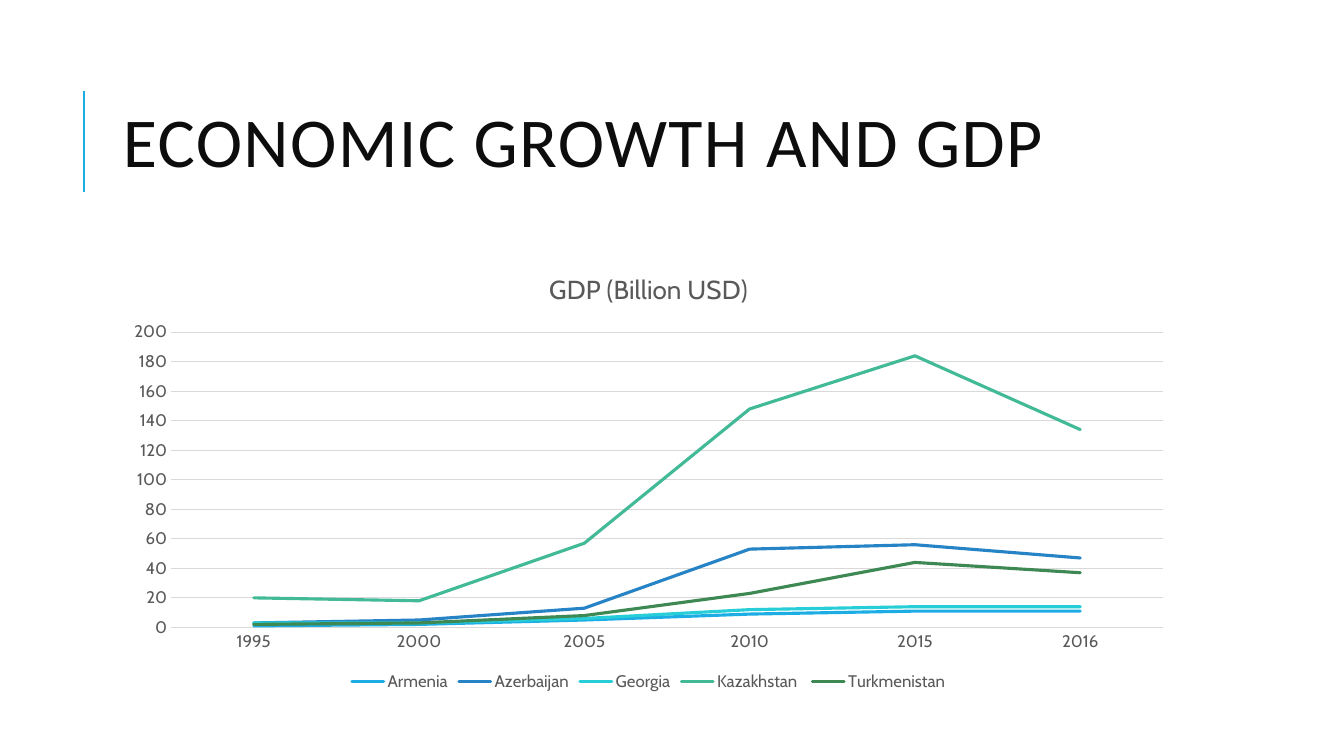
from dataclasses import dataclass

from lxml.etree import SubElement
from pptx import Presentation
from pptx.chart.axis import CategoryAxis, ValueAxis
from pptx.chart.chart import Chart
from pptx.chart.data import CategoryChartData
from pptx.dml.color import RGBColor
from pptx.dml.line import LineFormat
from pptx.enum.chart import XL_CHART_TYPE, XL_LEGEND_POSITION, XL_MARKER_STYLE, XL_TICK_MARK
from pptx.enum.shapes import MSO_CONNECTOR
from pptx.enum.text import MSO_ANCHOR, MSO_AUTO_SIZE, PP_ALIGN
from pptx.oxml.ns import qn
from pptx.slide import Slide
from pptx.text.text import Font
from pptx.util import Pt

HEADING_FONT = "Calibri"
CHART_FONT = "Cabin"
GREY_TEXT = "595959"
GRID_GREY = "D9D9D9"
CONTENT_LEFT = Pt(80.64)
CONTENT_WIDTH = Pt(765.36)


@dataclass(frozen=True)
class Country:
    name: str
    gdp: tuple[int, ...]
    color: str


YEARS = ("1995", "2000", "2005", "2010", "2015", "2016")
COUNTRIES = (
    Country("Armenia", (1, 2, 5, 9, 11, 11), "1CADE4"),
    Country("Azerbaijan", (3, 5, 13, 53, 56, 47), "2683C6"),
    Country("Georgia", (3, 3, 6, 12, 14, 14), "27CED7"),
    Country("Kazakhstan ", (20, 18, 57, 148, 184, 134), "42BA97"),
    Country("Turkmenistan", (2, 3, 8, 23, 44, 37), "3E8853"),
)


def rgb(color: str) -> RGBColor:
    return RGBColor.from_string(color)


def style_font(font: Font, name: str, size: float, color: str) -> None:
    font.name = name
    font.size = Pt(size)
    font.bold = False
    font.color.rgb = rgb(color)


def style_line(line: LineFormat, color: str, width: float) -> None:
    line.color.rgb = rgb(color)
    line.width = Pt(width)


def add_accent_line(slide: Slide) -> None:
    connector = slide.shapes.add_connector(
        MSO_CONNECTOR.STRAIGHT, Pt(60), Pt(136.8), Pt(60), Pt(64.8)
    )
    style_line(connector.line, "1CADE4", 1.5)
    SubElement(connector.element.spPr, qn("a:effectLst"))


def fill_title(slide: Slide) -> None:
    title = slide.shapes.title
    title.left, title.top = CONTENT_LEFT, Pt(46.08)
    title.width, title.height = CONTENT_WIDTH, Pt(118.08)
    frame = title.text_frame
    frame.text = "ECONOMIC GROWTH AND GDP"
    frame.word_wrap = True
    frame.auto_size = MSO_AUTO_SIZE.NONE
    frame.vertical_anchor = MSO_ANCHOR.MIDDLE
    paragraph = frame.paragraphs[0]
    paragraph.alignment = PP_ALIGN.LEFT
    paragraph.line_spacing = 0.8
    style_font(paragraph.font, HEADING_FONT, 50, "0D0D0D")
    paragraph.runs[0].font._element.set("spc", "100")


def style_axis(axis: CategoryAxis | ValueAxis) -> None:
    axis.major_tick_mark = XL_TICK_MARK.NONE
    axis.minor_tick_mark = XL_TICK_MARK.NONE
    style_font(axis.tick_labels.font, CHART_FONT, 12, GREY_TEXT)


def style_chart(chart: Chart) -> None:
    style_font(chart.font, CHART_FONT, 10, "000000")

    chart.has_title = True
    title_frame = chart.chart_title.text_frame
    title_frame.text = "GDP (Billion USD)"
    style_font(title_frame.paragraphs[0].font, CHART_FONT, 18.6, GREY_TEXT)
    chart.chart_title.include_in_layout = False

    chart.has_legend = True
    chart.legend.position = XL_LEGEND_POSITION.BOTTOM
    chart.legend.include_in_layout = False
    style_font(chart.legend.font, CHART_FONT, 12, GREY_TEXT)

    style_axis(chart.category_axis)
    style_line(chart.category_axis.format.line, GRID_GREY, 0.75)

    value_axis = chart.value_axis
    style_axis(value_axis)
    value_axis.minimum_scale, value_axis.maximum_scale = 0, 200
    value_axis.major_unit = 20
    value_axis.format.line.fill.background()
    style_line(value_axis.major_gridlines.format.line, GRID_GREY, 0.75)

    plot = chart.plots[0]
    plot.vary_by_categories = False
    for series, country in zip(plot.series, COUNTRIES):
        series.smooth = False
        series.marker.style = XL_MARKER_STYLE.NONE
        style_line(series.format.line, country.color, 2.25)
        series.format.line._ln.set("cap", "rnd")


def add_gdp_chart(slide: Slide) -> None:
    data = CategoryChartData(number_format="General")
    data.categories = YEARS
    for country in COUNTRIES:
        data.add_series(country.name, country.gdp)
    frame = slide.shapes.add_chart(
        XL_CHART_TYPE.LINE, CONTENT_LEFT, Pt(180), CONTENT_WIDTH, Pt(316.8), data
    )
    style_chart(frame.chart)


def main() -> None:
    presentation = Presentation()
    presentation.slide_width, presentation.slide_height = Pt(960), Pt(540)
    slide = presentation.slides.add_slide(presentation.slide_layouts[5])
    add_accent_line(slide)
    fill_title(slide)
    add_gdp_chart(slide)
    presentation.save("out.pptx")


if __name__ == "__main__":
    main()
